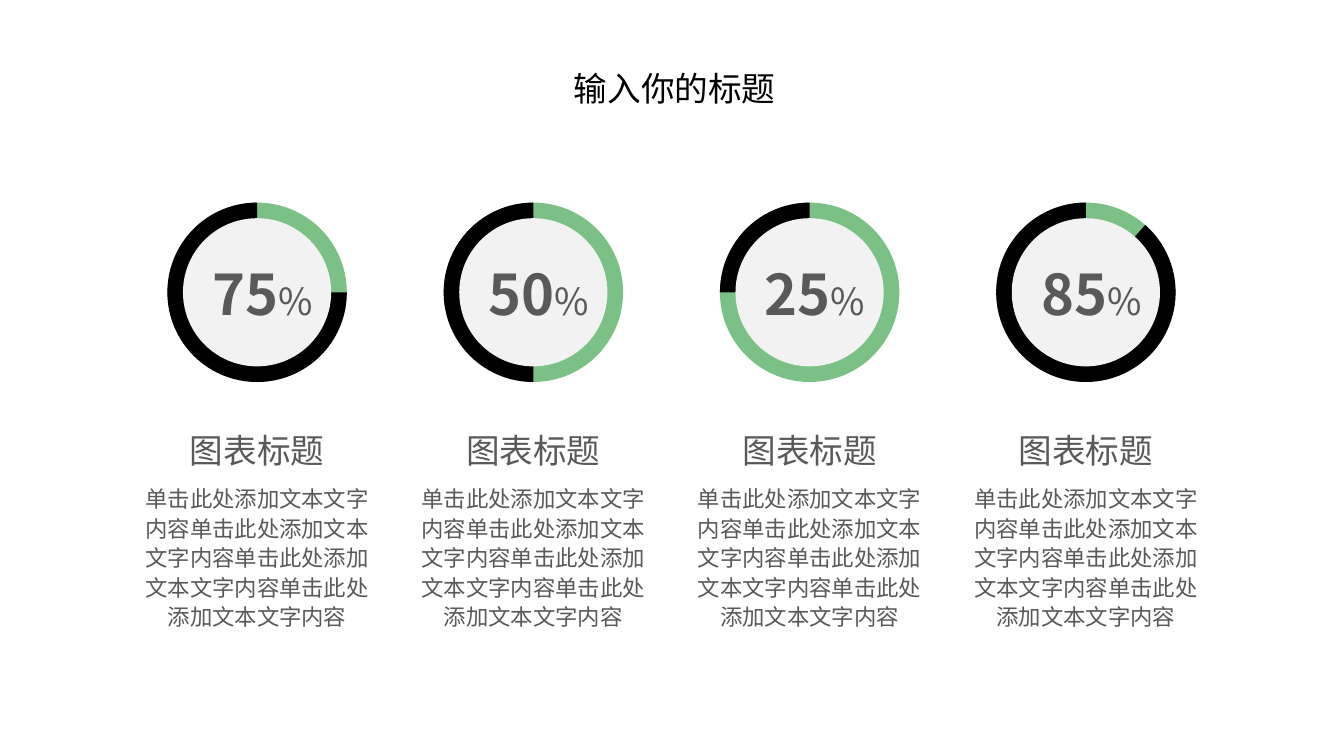
from lxml import etree
from pptx import Presentation
from pptx import util as u
from pptx.dml.color import RGBColor
from pptx.enum import shapes, text
from pptx.oxml.ns import qn

COL, ROW, EDGE = 2.74, 0.5, 1.18  # inches
SHAPE = shapes.MSO_SHAPE
BLACK, GREEN, PALE, GREY = "000000", "7BC185", "F2F2F2", "595959"
# label and black share of the ring, in percent
RINGS = [("75", 75), ("50", 50), ("25", 25), ("85", 88.5)]
HEAD = "图表标题"
BODY = "单击此处添加文本文字内容" * 4


def paint(fill, tone):
    fill.solid()
    fill.fore_color.rgb = RGBColor.from_string(tone)


class Deck:
    font = "Noto Sans CJK SC"

    def __init__(self):
        self.deck = Presentation()
        self.deck.slide_width = u.Inches(13.33)
        self.deck.slide_height = u.Inches(7.5)
        self.page = self.deck.slides.add_slide(self.deck.slide_layouts[5])

    def box(self, mid, top, wide, high):
        """Turn a centre column, top row and size in cells into lengths."""
        left = EDGE + (mid - wide / 2) * COL
        return [u.Inches(n) for n in (left, top * ROW, wide * COL, high * ROW)]

    def put(self, frame, runs, tone, align="CENTER", before=None, line=None):
        """Fill the frame with one paragraph of (words, size, bold) runs."""
        frame.word_wrap = True
        para = frame.paragraphs[0]
        para.alignment = text.PP_ALIGN[align]
        if before:
            para.space_before = u.Pt(before)
        if line:
            para.line_spacing = line
        for words, size, bold in runs:
            run = para.add_run()
            run.text = words
            run.font.size, run.font.bold = u.Pt(size), bold
            run.font.name = self.font
            paint(run.font.fill, tone)
            east = etree.SubElement(run.font._element, qn("a:ea"))
            east.set("typeface", self.font)

    def title(self, words, *cell):
        head = self.page.shapes.title
        head.left, head.top, head.width, head.height = self.box(*cell)
        frame = head.text_frame
        frame.auto_size = text.MSO_AUTO_SIZE.NONE
        frame.vertical_anchor = text.MSO_ANCHOR.MIDDLE
        self.put(frame, [(words, 24, False)], BLACK, "LEFT")

    def label(self, home, cell, runs, anchor="TOP", **gaps):
        frame = home.add_textbox(*self.box(*cell)).text_frame
        frame.margin_left = frame.margin_right = 0
        frame.margin_top = frame.margin_bottom = 0
        frame.auto_size = text.MSO_AUTO_SIZE.SHAPE_TO_FIT_TEXT
        frame.vertical_anchor = text.MSO_ANCHOR[anchor]
        self.put(frame, runs, GREY, **gaps)

    def disc(self, home, mid, size, tone, kind=SHAPE.OVAL):
        """Draw a round shape, size in rows, on the ring's centre line."""
        cell = self.box(mid, 5.8 - size / 2, size * ROW / COL, size)
        disc = home.add_shape(kind, *cell)
        disc.shadow.inherit = False
        paint(disc.fill, tone)
        disc.line.fill.background()
        return disc

    def ring(self, mid, value, share):
        home = self.page.shapes.add_group_shape().shapes
        self.disc(home, mid, 3.56, GREEN)
        pie = self.disc(home, mid, 3.56, BLACK, SHAPE.PIE)
        start = (270 - share * 3.6) % 360
        # an angle is stored in 60000ths, an adjustment in 100000ths
        pie.adjustments[0], pie.adjustments[1] = start * 0.6, 270 * 0.6
        self.disc(home, mid, 2.94, PALE)
        self.label(home, (mid + 0.02, 5.14, 0.61, 1.34),
                   [(value, 40, True), ("%", 26.7, False)], "MIDDLE", before=4)


def main():
    deck = Deck()
    for i, (value, share) in enumerate(RINGS):
        mid = i + 0.5
        deck.ring(mid, value, share)
        home = deck.page.shapes
        deck.label(home, (mid, 8.54, 0.82, 0.8), [(HEAD, 24, False)], before=3)
        deck.label(home, (mid, 9.58, 0.82, 2.96), [(BODY, 16, False)], line=1.1)
    deck.title("输入你的标题", 2.09, 1.24, 0.96, 1)
    deck.deck.save("out.pptx")


if __name__ == "__main__":
    main()
